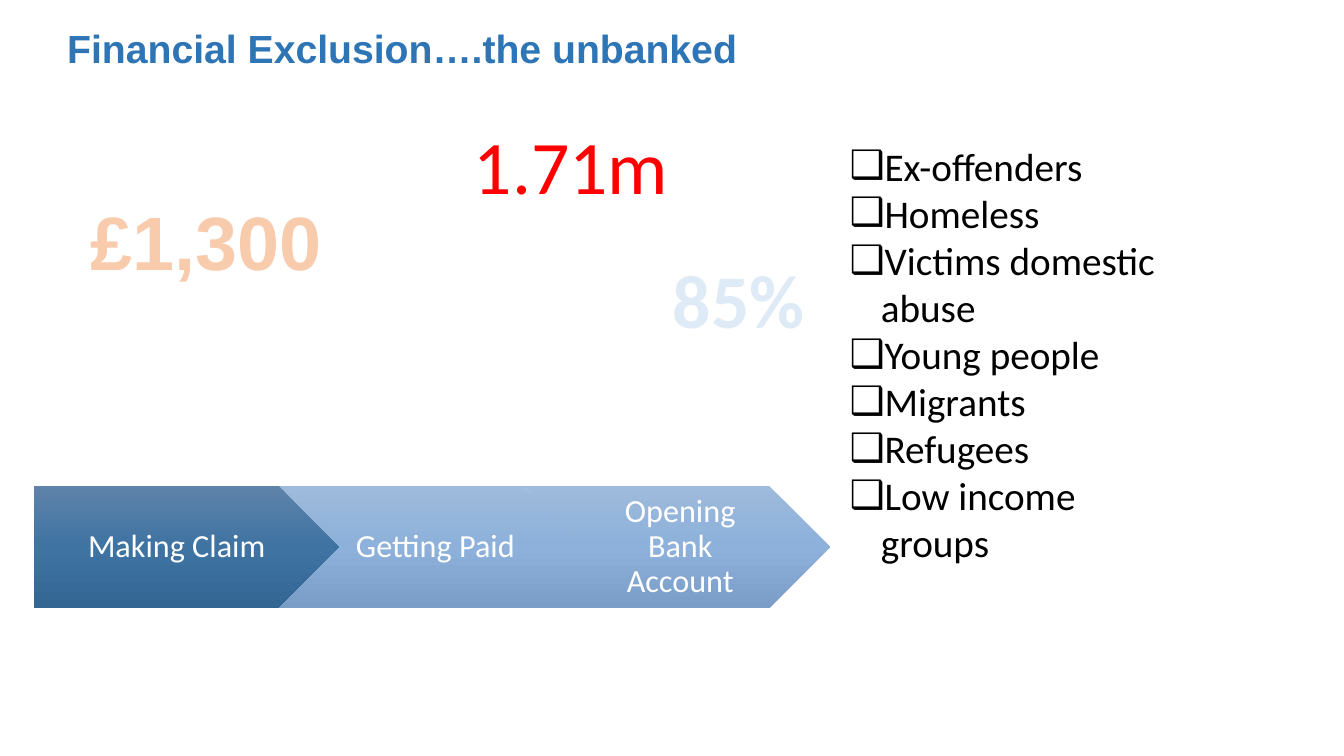
"""Build the slide on financial exclusion and the unbanked."""
from copy import deepcopy
from dataclasses import dataclass

from lxml import etree
from pptx import Presentation
from pptx.dml.color import RGBColor
from pptx.enum.shapes import MSO_SHAPE
from pptx.enum.text import MSO_ANCHOR, MSO_AUTO_SIZE, PP_ALIGN
from pptx.oxml.ns import qn
from pptx.util import Cm, Pt

PENTAGON, CHEVRON = MSO_SHAPE.PENTAGON, MSO_SHAPE.CHEVRON
LEFT, CENTER = PP_ALIGN.LEFT, PP_ALIGN.CENTER
MIDDLE = MSO_ANCHOR.MIDDLE
NO_FIT, GROW = MSO_AUTO_SIZE.NONE, MSO_AUTO_SIZE.SHAPE_TO_FIT_TEXT


@dataclass(frozen=True)
class Theme:
    """Fonts, colours and type sizes of the slide."""
    head: str = "Arial"
    body: str = "Calibri"
    title: str = "2E75B6"
    peach: str = "F8CBAD"
    red: str = "FF0000"
    pale: str = "DEEBF7"
    black: str = "000000"
    white: str = "FFFFFF"
    dark_step: tuple = ("5F83AA", "3F73A2", "346694")
    light_step: tuple = ("9EBADC", "8DB1DA", "799DC6")
    figure_size: int = 54
    text_size: int = 28
    step_size: int = 23


class Deck:
    """Holds the theme and the current slide, and draws its elements."""

    def __init__(self, prs, theme):
        """Add a title-only slide to the presentation."""
        self.theme = theme
        self.slide = prs.slides.add_slide(prs.slide_layouts[5])

    def run(self, p, text, font, size, color, bold=False):
        """Add one formatted run to a paragraph."""
        r = p.add_run()
        r.text = text
        r.font.name, r.font.size, r.font.bold = font, Pt(size), bold
        r.font.color.rgb = RGBColor.from_string(color)

    def title(self, text, x, y, w, h):
        """Place and format the title placeholder."""
        s = self.slide.shapes.title
        s.left, s.top, s.width, s.height = Cm(x), Cm(y), Cm(w), Cm(h)
        tf = s.text_frame
        tf.auto_size, tf.vertical_anchor = NO_FIT, MIDDLE
        p = tf.paragraphs[0]
        p.alignment = LEFT
        self.run(p, text, self.theme.head, self.theme.text_size, self.theme.title, True)

    def box(self, x, y, w, h, wrap=True):
        """Add a text box and return its text frame."""
        tf = self.slide.shapes.add_textbox(Cm(x), Cm(y), Cm(w), Cm(h)).text_frame
        tf.word_wrap, tf.auto_size = wrap, GROW
        return tf

    def figure(self, text, x, y, w, font, color, bold, align=CENTER):
        """Add one large key figure."""
        p = self.box(x, y, w, 2.57, wrap=False).paragraphs[0]
        p.alignment = align
        self.run(p, text, font, self.theme.figure_size, color, bold)

    def checklist(self, items, x, y, w, h, indent=0.79):
        """Add a list with square box bullets."""
        tf = self.box(x, y, w, h)
        for i, item in enumerate(items):
            p = tf.add_paragraph() if i else tf.paragraphs[0]
            pPr = p._p.get_or_add_pPr()
            pPr.set("marL", str(Cm(indent)))
            pPr.set("indent", str(-Cm(indent)))
            etree.SubElement(pPr, qn("a:buFont")).set("typeface", self.theme.head)
            etree.SubElement(pPr, qn("a:buChar")).set("char", "❑")
            self.run(p, item, self.theme.body, self.theme.text_size, self.theme.black)

    def step(self, text, kind, colors, x, y, w, h, inset):
        """Add one labelled arrow of the process."""
        s = self.slide.shapes.add_shape(kind, Cm(x), Cm(y), Cm(w), Cm(h))
        s.shadow.inherit = False
        s.line.fill.background()
        s.fill.gradient()
        s.fill.gradient_angle = 270
        first = next(s._element.spPr.iter(qn("a:gs")))
        first.addnext(deepcopy(first))
        for stop, color, position in zip(s.fill.gradient_stops, colors, (0, 0.5, 1)):
            stop.color.rgb = RGBColor.from_string(color)
            stop.position = position
        tf = s.text_frame
        tf.word_wrap, tf.vertical_anchor = True, MIDDLE
        tf.margin_left, tf.margin_right = Cm(inset), Cm(0.08)
        tf.margin_top = tf.margin_bottom = Cm(0.18)
        p = tf.paragraphs[0]
        p.alignment, p.line_spacing = CENTER, 0.9
        self.run(p, text, self.theme.body, self.theme.step_size, self.theme.white)


def main():
    """Build and save the presentation."""
    prs = Presentation()
    prs.slide_width, prs.slide_height = Cm(33.87), Cm(19.05)
    theme = Theme()
    deck = Deck(prs, theme)
    deck.title("Financial Exclusion….the unbanked", 1.44, 0.5, 28.5, 1.42)
    deck.figure("£1,300", 2.03, 4.78, 6.6, theme.head, theme.peach, True, LEFT)
    deck.figure("1.71m", 11.66, 2.87, 5.46, theme.body, theme.red, False)
    deck.figure("85%", 16.62, 6.25, 4, theme.body, theme.pale, True)
    deck.checklist(
        ["Ex-offenders", "Homeless", "Victims domestic abuse", "Young people",
         "Migrants", "Refugees", "Low income groups"],
        21.16, 3.45, 8.59, 11.79)
    steps = [
        ("Making Claim", PENTAGON, theme.dark_step, 0.33),
        ("Getting Paid", CHEVRON, theme.light_step, 0.25),
        ("Opening Bank Account", CHEVRON, theme.light_step, 0.25),
    ]
    for i, (text, kind, colors, inset) in enumerate(steps):
        deck.step(text, kind, colors, 0.86 + i * 6.17, 12.24, 7.72, 3.09, inset)
    prs.save("out.pptx")


if __name__ == "__main__":
    main()
